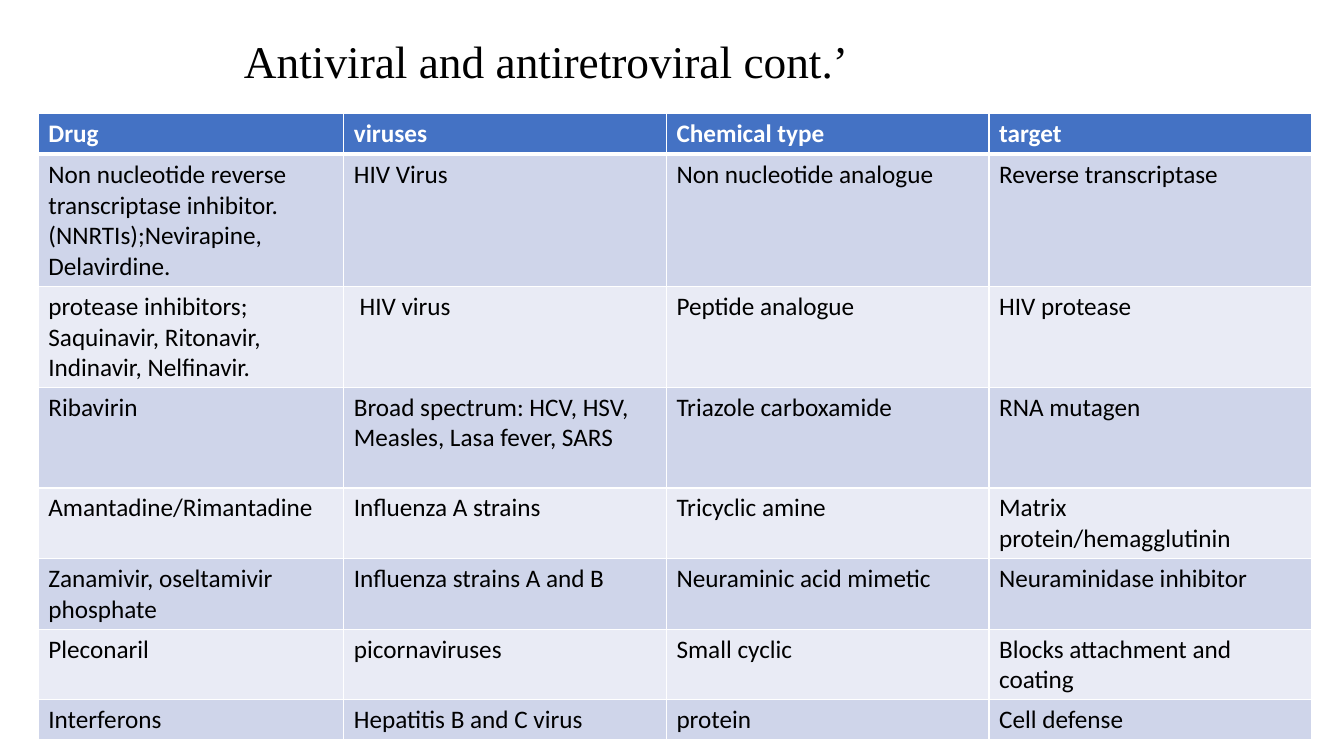
from dataclasses import dataclass

from lxml.etree import SubElement
from pptx import Presentation
from pptx.dml.color import RGBColor
from pptx.enum.text import MSO_ANCHOR
from pptx.oxml.ns import qn
from pptx.util import Inches, Pt


@dataclass(frozen=True)
class Theme:
    title_font: str = "Times New Roman"
    body_font: str = "Calibri"
    title_size: float = 32.4
    body_size: float = 18
    text: str = "000000"
    white: str = "FFFFFF"
    header: str = "4472C4"
    bands: tuple = ("CFD5EA", "E9EBF5")
    thin_line: float = 1
    header_line: float = 3


COLUMN_WIDTHS = [3.03, 3.2, 3.2, 3.2]
ROW_HEIGHTS = [0.4, 1.31, 1, 1, 0.7, 0.7, 0.7, 0.4]
DRUG_ROWS = [
    ["Drug", "viruses", "Chemical type", "target"],
    ["Non nucleotide reverse transcriptase inhibitor.(NNRTIs);Nevirapine, Delavirdine.",
     "HIV Virus", "Non nucleotide analogue", "Reverse transcriptase"],
    ["protease inhibitors; Saquinavir, Ritonavir, Indinavir, Nelfinavir.",
     " HIV virus", "Peptide analogue", "HIV protease"],
    ["Ribavirin", "Broad spectrum: HCV, HSV, Measles, Lasa fever, SARS",
     "Triazole carboxamide", "RNA mutagen"],
    ["Amantadine/Rimantadine", "Influenza A strains",
     "Tricyclic amine", "Matrix protein/hemagglutinin"],
    ["Zanamivir, oseltamivir phosphate", "Influenza strains A and B",
     "Neuraminic acid mimetic", "Neuraminidase inhibitor"],
    ["Pleconaril", "picornaviruses", "Small cyclic", "Blocks attachment and coating"],
    ["Interferons", "Hepatitis B and C virus", "protein", "Cell defense"],
]


def write_text(text_frame, text, *, font, size, color, bold=False, line_spacing=None):
    paragraph = text_frame.paragraphs[0]
    paragraph.line_spacing = line_spacing
    run = paragraph.add_run()
    run.text = text
    run.font.name = font
    run.font.size = Pt(size)
    run.font.bold = bold
    run.font.color.rgb = RGBColor.from_string(color)


def set_border(cell, side, color, width):
    properties = cell._tc.get_or_add_tcPr()
    line = SubElement(properties, qn(f"a:ln{side}"), w=str(Pt(width)))
    fill = SubElement(line, qn("a:solidFill"))
    SubElement(fill, qn("a:srgbClr"), val=color)


class SlideBuilder:
    def __init__(self, slide, theme):
        self.slide = slide
        self.theme = theme

    def add_title(self, text, left, top, width, height, indent):
        shape = self.slide.shapes.add_textbox(
            Inches(left), Inches(top), Inches(width), Inches(height))
        frame = shape.text_frame
        frame.word_wrap = True
        frame.vertical_anchor = MSO_ANCHOR.MIDDLE
        frame.margin_left = Inches(indent)
        frame.margin_top = Inches(0.06)
        frame.margin_bottom = 0
        write_text(frame, text, font=self.theme.title_font,
                   size=self.theme.title_size, color=self.theme.text, line_spacing=0.9)

    def add_table(self, rows, left, top, column_widths, row_heights):
        table = self.slide.shapes.add_table(
            len(rows), len(column_widths), Inches(left), Inches(top),
            Inches(sum(column_widths)), Inches(sum(row_heights))).table
        for column, width in zip(table.columns, column_widths):
            column.width = Inches(width)
        for row, height in zip(table.rows, row_heights):
            row.height = Inches(height)
        for row_index, row in enumerate(rows):
            for column_index, text in enumerate(row):
                self.format_cell(table.cell(row_index, column_index), text, row_index)

    def format_cell(self, cell, text, row_index):
        theme = self.theme
        is_header = row_index == 0
        # The heavy rule is shared by the header and the first drug row
        heavy_side = {0: "B", 1: "T"}.get(row_index)
        for side in "LRTB":
            width = theme.header_line if side == heavy_side else theme.thin_line
            set_border(cell, side, theme.white, width)
        fill_color = theme.header if is_header else theme.bands[(row_index - 1) % 2]
        cell.fill.solid()
        cell.fill.fore_color.rgb = RGBColor.from_string(fill_color)
        write_text(cell.text_frame, text, font=theme.body_font, size=theme.body_size,
                   color=theme.white if is_header else theme.text, bold=is_header)


def main():
    presentation = Presentation()
    presentation.slide_width = Inches(13.33)
    presentation.slide_height = Inches(7.5)
    slide = presentation.slides.add_slide(presentation.slide_layouts[6])
    builder = SlideBuilder(slide, Theme())

    # Title
    builder.add_title("Antiviral and antiretroviral cont.’", 1.2, 0.34, 11, 0.53, indent=1.22)

    # Drug table
    builder.add_table(DRUG_ROWS, 0.38, 1.13, COLUMN_WIDTHS, ROW_HEIGHTS)

    presentation.save("out.pptx")


if __name__ == "__main__":
    main()
